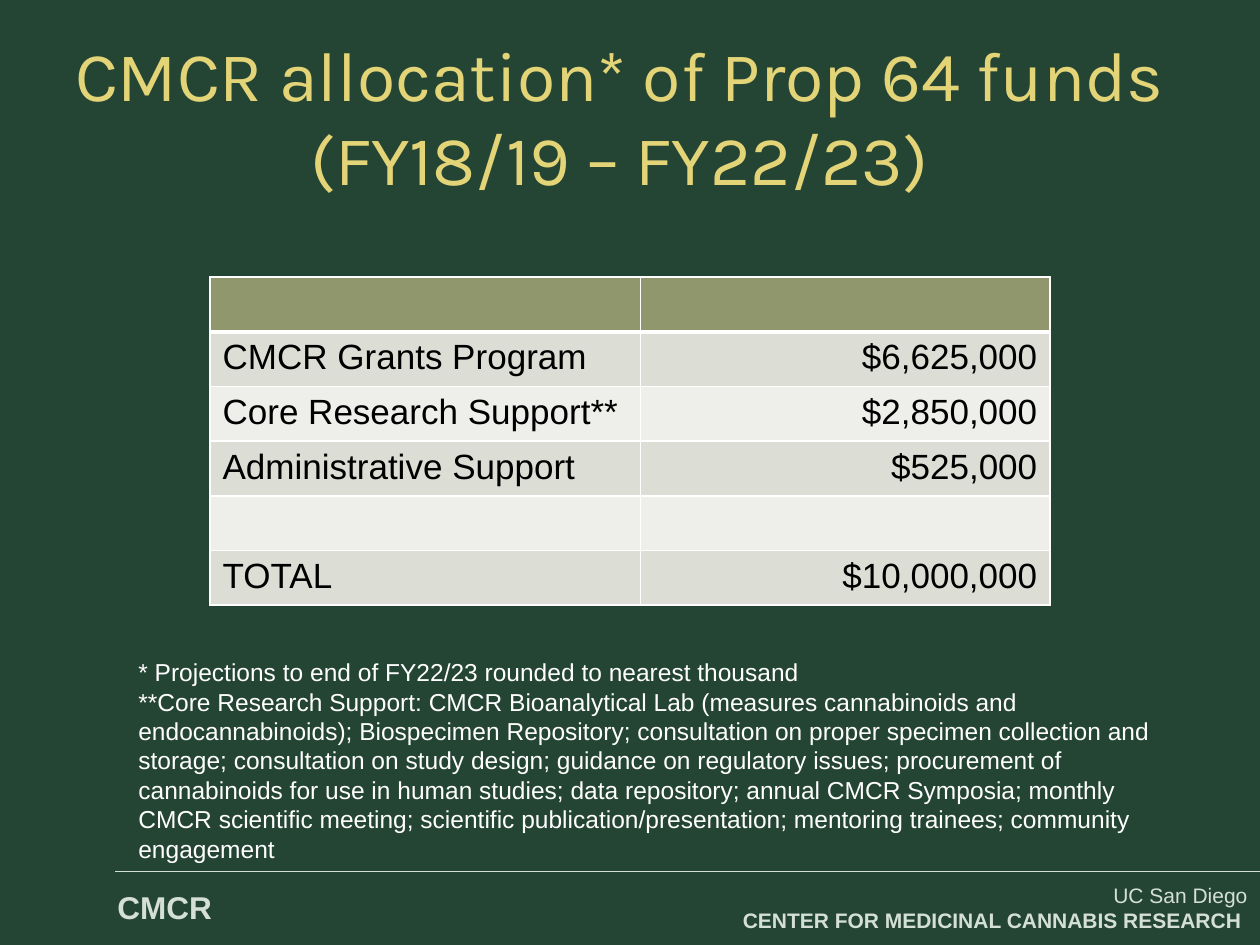
from dataclasses import dataclass

from lxml.etree import SubElement
from pptx import Presentation
from pptx.dml.color import RGBColor
from pptx.enum.shapes import MSO_CONNECTOR
from pptx.enum.text import MSO_ANCHOR, PP_ALIGN
from pptx.oxml.ns import qn
from pptx.util import Pt

GREEN = RGBColor(0x25, 0x45, 0x34)
MIST = RGBColor(0xD4, 0xDF, 0xD7)
GOLD = RGBColor(0xE4, 0xD4, 0x78)
WHITE = RGBColor(0xFF, 0xFF, 0xFF)
BLACK = RGBColor(0x00, 0x00, 0x00)
OLIVE = RGBColor(0x91, 0x97, 0x6C)
BAND_DARK = RGBColor(0xDC, 0xDD, 0xD4)
BAND_LIGHT = RGBColor(0xEE, 0xEF, 0xEB)

COLUMN_WIDTHS = (246, 234)
ROW_HEIGHT = 29.6


@dataclass(frozen=True)
class Allocation:
    item: str = ""
    amount: str = ""


@dataclass(frozen=True)
class Line:
    text: str
    bold: bool = False


ALLOCATIONS = (
    Allocation(),
    Allocation("CMCR Grants Program", "$6,625,000"),
    Allocation("Core Research Support**", "$2,850,000"),
    Allocation("Administrative Support", "$525,000"),
    Allocation(),
    Allocation("TOTAL", "$10,000,000"),
)

NOTES = (
    Line("* Projections to end of FY22/23 rounded to nearest thousand"),
    Line(
        "**Core Research Support: CMCR Bioanalytical Lab (measures cannabinoids "
        "and endocannabinoids); Biospecimen Repository; consultation on proper "
        "specimen collection and storage; consultation on study design; guidance "
        "on regulatory issues; procurement of cannabinoids for use in human "
        "studies; data repository; annual CMCR Symposia; monthly CMCR scientific "
        "meeting; scientific publication/presentation; mentoring trainees; "
        "community engagement"
    ),
)


def write(para, text: str, *, size: float, color: RGBColor, font: str = "Arial",
          bold: bool = False, align=PP_ALIGN.LEFT) -> None:
    para.text = text
    para.alignment = align
    para.font.name = font
    para.font.size = Pt(size)
    para.font.bold = bold
    para.font.color.rgb = color


def add_text(page, lines: tuple[Line, ...], left: float, top: float, width: float,
             height: float, *, anchor=MSO_ANCHOR.TOP, wrap: bool = True,
             bottom_inset: float = 3.6, **style) -> None:
    box = page.shapes.add_textbox(Pt(left), Pt(top), Pt(width), Pt(height))
    frame = box.text_frame
    frame.word_wrap = wrap
    frame.vertical_anchor = anchor
    frame.margin_bottom = Pt(bottom_inset)
    for index, line in enumerate(lines):
        para = frame.add_paragraph() if index else frame.paragraphs[0]
        write(para, line.text, bold=line.bold, **style)


def add_rule(page, left: float, right: float, top: float) -> None:
    rule = page.shapes.add_connector(
        MSO_CONNECTOR.STRAIGHT, Pt(left), Pt(top), Pt(right), Pt(top))
    rule.line.color.rgb = MIST
    rule.line.width = Pt(1)
    SubElement(rule._element.spPr, qn("a:effectLst"))


def set_border(cell, side: str, width: float, color: RGBColor) -> None:
    border = SubElement(cell._tc.get_or_add_tcPr(), qn(f"a:ln{side}"), w=str(Pt(width)))
    fill = SubElement(border, qn("a:solidFill"))
    SubElement(fill, qn("a:srgbClr"), val=str(color))


def format_cell(cell, row: int, text: str, align) -> None:
    for side in "LRTB":
        header_edge = (row, side) in ((0, "B"), (1, "T"))
        set_border(cell, side, 3 if header_edge else 1, WHITE)
    cell.fill.solid()
    cell.fill.fore_color.rgb = (
        OLIVE if row == 0 else BAND_DARK if row % 2 else BAND_LIGHT)
    write(cell.text_frame.paragraphs[0], text, size=20, color=BLACK, align=align)


def add_allocation_table(page, left: float, top: float) -> None:
    table = page.shapes.add_table(
        len(ALLOCATIONS), len(COLUMN_WIDTHS), Pt(left), Pt(top),
        Pt(sum(COLUMN_WIDTHS)), Pt(ROW_HEIGHT * len(ALLOCATIONS))).table
    for column, width in zip(table.columns, COLUMN_WIDTHS):
        column.width = Pt(width)
    for row, allocation in enumerate(ALLOCATIONS):
        table.rows[row].height = Pt(ROW_HEIGHT)
        format_cell(table.cell(row, 0), row, allocation.item, PP_ALIGN.LEFT)
        format_cell(table.cell(row, 1), row, allocation.amount, PP_ALIGN.RIGHT)


def main() -> None:
    deck = Presentation()
    deck.slide_width, deck.slide_height = Pt(720), Pt(540)
    page = deck.slides.add_slide(deck.slide_layouts[6])
    page.background.fill.solid()
    page.background.fill.fore_color.rgb = GREEN

    add_text(page, (Line("CMCR", bold=True),), 60, 504, 71, 29,
             wrap=False, size=18, color=MIST)
    add_rule(page, 66, 720, 498)
    add_text(page, (Line("UC San Diego"),
                    Line("CENTER FOR MEDICINAL CANNABIS RESEARCH ", bold=True)),
             222, 500.5, 498, 36, anchor=MSO_ANCHOR.MIDDLE,
             size=12, color=MIST, align=PP_ALIGN.RIGHT)
    add_text(page, (Line("CMCR allocation* of Prop 64 funds\v(FY18/19 – FY22/23)"),),
             30, 48, 648, 84, anchor=MSO_ANCHOR.MIDDLE, bottom_inset=51.6,
             size=40, color=GOLD, font="Karla", align=PP_ALIGN.CENTER)
    add_allocation_table(page, 120, 158.4)
    add_text(page, NOTES, 72, 372, 618, 109, size=14, color=WHITE)

    deck.save("out.pptx")


if __name__ == "__main__":
    main()
